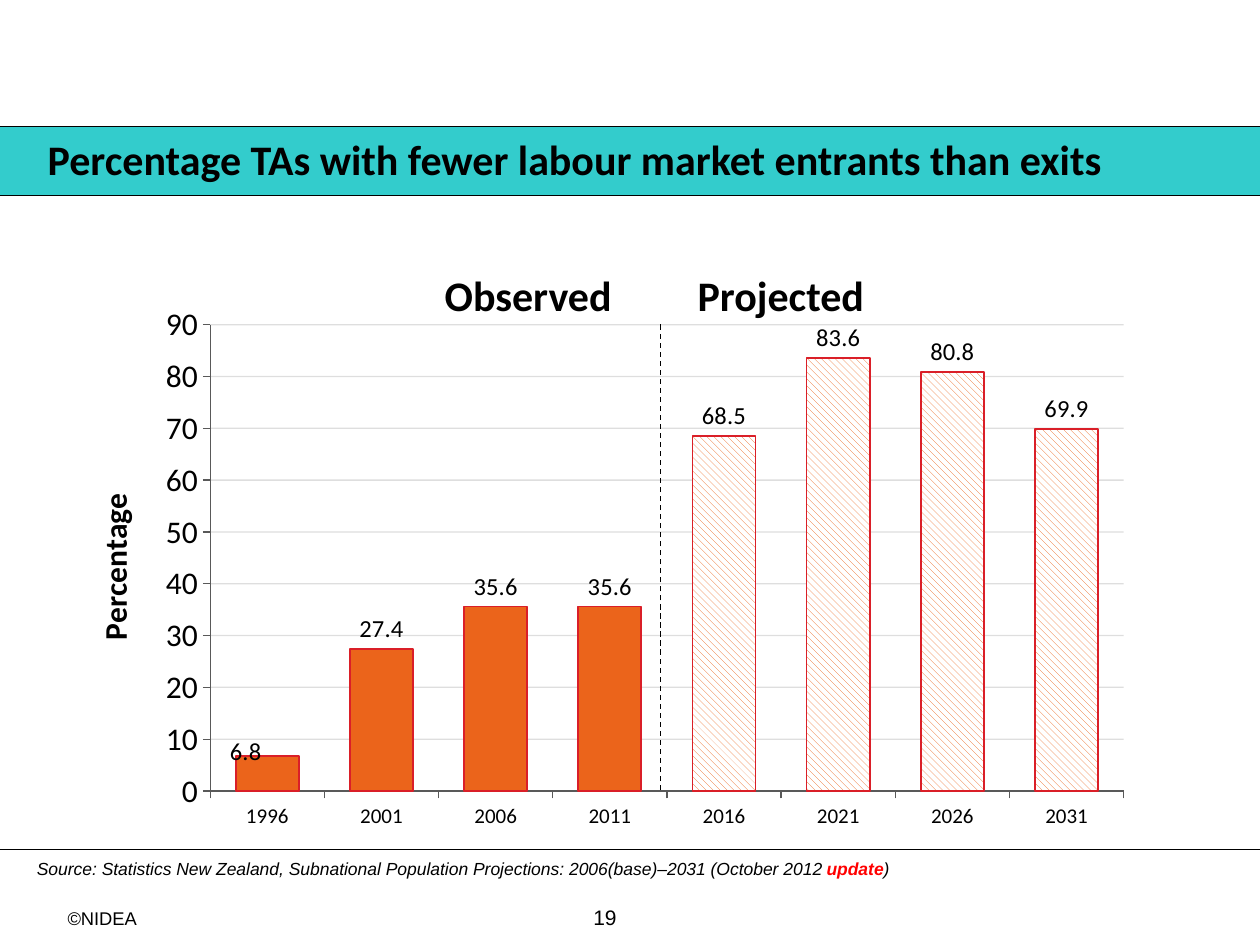
from lxml import etree
from pptx import Presentation
from pptx import util as u
from pptx.chart import data
from pptx.dml import color
from pptx.enum import chart as ch
from pptx.enum import dml, shapes, text
from pptx.oxml import parse_xml
from pptx.oxml.ns import nsdecls, qn

BLACK, ORANGE, RED_EDGE, AXIS = "000000", "EB641B", "DA1F28", "595959"
SHARES = {"1996": 6.8, "2001": 27.4, "2006": 35.6, "2011": 35.6,
          "2016": 68.5, "2021": 83.6, "2026": 80.8, "2031": 69.9}
OBSERVED_COUNT = 4


def rgb(code):
    """Turn a hex string into a colour."""
    return color.RGBColor.from_string(code)


def style_font(font, size, name="Calibri", code=BLACK, bold=False, italic=False):
    """Set the look of a font."""
    font.size, font.name, font.bold, font.italic = u.Pt(size), name, bold, italic
    font.color.rgb = rgb(code)


def style_line(line, width, code=BLACK):
    """Set the colour and width of a line."""
    line.color.rgb = rgb(code)
    line.width = u.Pt(width)


def add_words(slide, box, words, size, anchor=text.MSO_ANCHOR.TOP, **look):
    """Add a text box with one paragraph and return that paragraph."""
    frame = slide.shapes.add_textbox(*map(u.Pt, box)).text_frame
    frame.word_wrap = True
    frame.vertical_anchor = anchor
    frame.text = words
    for run in frame.paragraphs[0].runs:
        style_font(run.font, size, **look)
    return frame.paragraphs[0]


def add_rule(slide, start, end, dashed=False):
    """Add a thin straight line between two points."""
    rule = slide.shapes.add_connector(
        shapes.MSO_CONNECTOR.STRAIGHT, *map(u.Pt, (*start, *end)))
    style_line(rule.line, 0.75)
    if dashed:
        rule.line.dash_style = dml.MSO_LINE.DASH
    etree.SubElement(rule._element.spPr, qn("a:effectLst"))


def add_title_band(slide, left, top, width, height):
    """Add the coloured band with the slide title."""
    band = slide.shapes.add_shape(
        shapes.MSO_SHAPE.RECTANGLE, *map(u.Pt, (left, top, width, height)))
    band.shadow.inherit = False
    band.fill.solid()
    band.fill.fore_color.rgb = rgb("33CCCC")
    style_line(band.line, 0.5)
    add_words(slide, (left + 28.8, top - 11.5, 700, 60.5),
              "Percentage TAs with fewer labour market entrants than exits",
              24, text.MSO_ANCHOR.MIDDLE, bold=True)


def make_layout(x, y, width=None, height=None):
    """Build a manual layout, as a plot area when it has a size."""
    parts = {"x": x, "y": y}
    if width:
        parts = {"layoutTarget": "inner", "xMode": "edge", "yMode": "edge",
                 **parts, "w": width, "h": height}
    inner = "".join(f'<c:{key} val="{value}"/>' for key, value in parts.items())
    return parse_xml(f'<c:layout {nsdecls("c")}><c:manualLayout>{inner}'
                     '</c:manualLayout></c:layout>')


def style_axes(chart):
    """Format both axes, the gridlines and the axis title."""
    years, percent = chart.category_axis, chart.value_axis
    for axis, size in ((years, 12), (percent, 18)):
        axis.major_tick_mark = ch.XL_TICK_MARK.OUTSIDE
        axis.minor_tick_mark = ch.XL_TICK_MARK.NONE
        style_font(axis.tick_labels.font, size)
        style_line(axis.format.line, 0.75, AXIS)
    percent.minimum_scale, percent.maximum_scale, percent.major_unit = 0, 90, 10
    percent.tick_labels.number_format = "0"
    percent.tick_labels.number_format_is_linked = False
    grid = percent.major_gridlines.format.line
    style_line(grid, 0.75, "808080")
    tint = percent.major_gridlines._xAx.find(".//" + qn("c:majorGridlines")).find(
        ".//" + qn("a:srgbClr"))
    etree.SubElement(tint, qn("a:alpha"), val="26000")
    caption = percent.axis_title.text_frame
    caption.text = "Percentage"
    style_font(caption.paragraphs[0].runs[0].font, 18, bold=True)


def style_columns(plot):
    """Fill observed columns solid and projected ones hatched, with labels."""
    plot.gap_width = 81
    plot.vary_by_categories = False
    shares = plot.series[0]
    shares.invert_if_negative = False
    for index in range(len(SHARES)):
        column = shares.points[index].format
        if index < OBSERVED_COUNT:
            column.fill.solid()
        else:
            column.fill.patterned()
            column.fill.pattern = dml.MSO_PATTERN.WIDE_DOWNWARD_DIAGONAL
            column.fill.back_color.rgb = rgb("FFFFFF")
        column.fill.fore_color.rgb = rgb(ORANGE)
        style_line(column.line, 1, RED_EDGE)
    labels = shares.data_labels
    labels.show_value = True
    labels.number_format, labels.number_format_is_linked = "#,##0.0", False
    labels.position = ch.XL_LABEL_POSITION.OUTSIDE_END
    style_font(labels.font, 14)
    first = shares.points[0].data_label
    style_font(first.font, 14)
    first.position = ch.XL_LABEL_POSITION.OUTSIDE_END
    moved = shares._element.find(".//" + qn("c:dLbl"))
    moved.find(qn("c:idx")).addnext(make_layout(-0.02, 0.03))


def add_share_chart(slide, left, top, width, height):
    """Add the column chart with its headings and divider."""
    table = data.CategoryChartData(number_format="0.0")
    table.categories = list(SHARES)
    table.add_series("Series 1", list(SHARES.values()))
    headings = add_words(slide, (left + 210.25, top - 32.5, 327.5, 50.5),
                         "Observed\tProjected", 24, text.MSO_ANCHOR.BOTTOM, bold=True)
    stops = etree.SubElement(headings._p.get_or_add_pPr(), qn("a:tabLst"))
    etree.SubElement(stops, qn("a:tab"), pos=str(u.Pt(144.5)), algn="l")
    chart = slide.shapes.add_chart(
        ch.XL_CHART_TYPE.COLUMN_CLUSTERED,
        *map(u.Pt, (left, top, width, height)), table).chart
    chart.has_legend = chart.has_title = False
    style_font(chart.font, 18)
    style_axes(chart)
    style_columns(chart.plots[0])
    plot_area = chart._chartSpace.chart.plotArea
    for old in plot_area.findall(qn("c:layout")):
        plot_area.remove(old)
    plot_area.insert(0, make_layout(0.135, 0.055, 0.845, 0.857))
    divider = left + 340.5
    add_rule(slide, (divider, top + 283), (divider, top + 16.5), dashed=True)


def add_footer(slide, left, top, width):
    """Add the rule, source, copyright and page number."""
    add_rule(slide, (left, top), (left + width, top))
    source = add_words(
        slide, (left + 14, top + 1.5, 562, 24),
        "Source: Statistics New Zealand, Subnational Population Projections: "
        "2006(base)–2031 (October 2012 ", 10, name="Arial", italic=True)
    for words, look in (("update", {"code": "FF0000", "bold": True}), (")", {})):
        run = source.add_run()
        run.text = words
        style_font(run.font, 10, "Arial", italic=True, **look)
    add_words(slide, (left + 31.5, top + 29.5, 70, 21), "©NIDEA", 10.5, name="Arial")
    add_words(slide, (left + 332, top + 28, 158, 22), "19", 12, name="Arial")


def main():
    """Build and save the slide."""
    deck = Presentation()
    deck.slide_width, deck.slide_height = u.Pt(720), u.Pt(540)
    slide = deck.slides.add_slide(deck.slide_layouts[6])
    add_title_band(slide, -8.6, 72, 737.2, 39.5)
    add_share_chart(slide, 36.75, 168.5, 617.75, 311)
    add_footer(slide, 0, 485.3, 720)
    deck.save("out.pptx")


if __name__ == "__main__":
    main()
